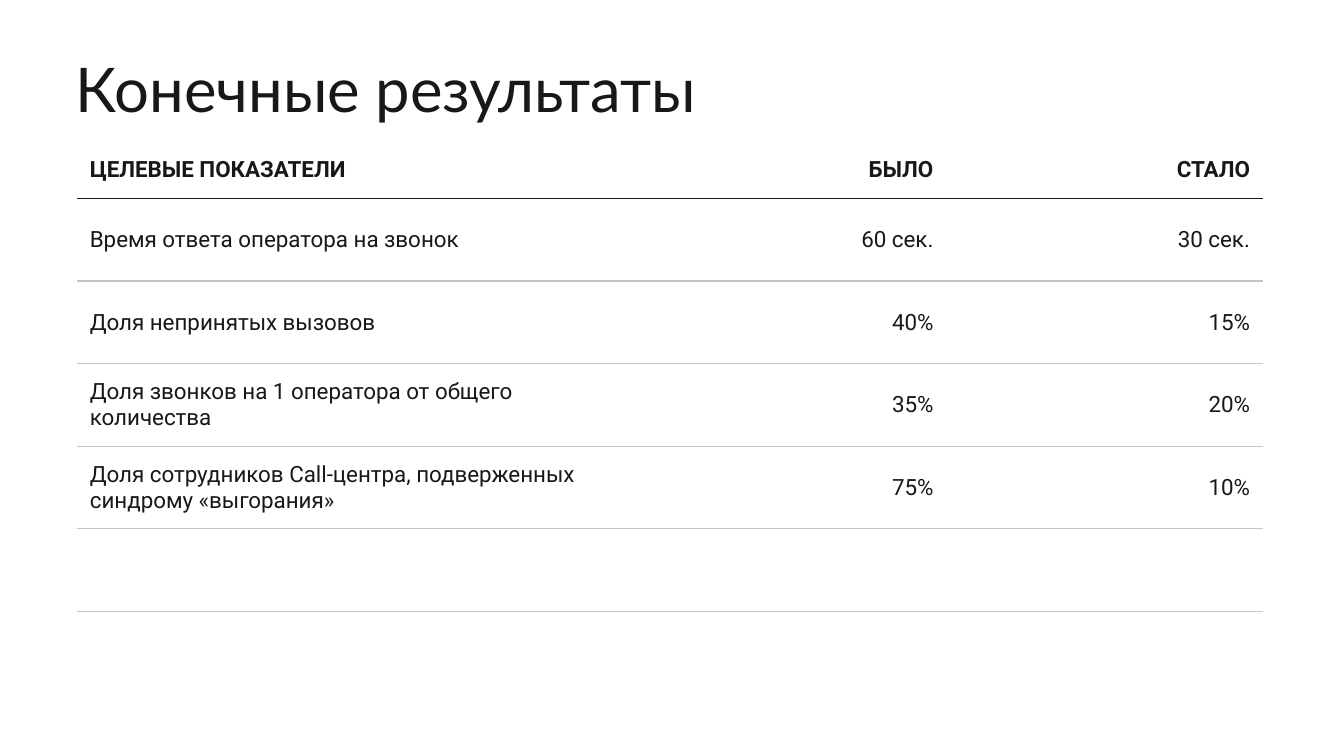
from lxml.etree import SubElement
from pptx import Presentation
from pptx.dml.color import RGBColor
from pptx.enum.text import MSO_ANCHOR, PP_ALIGN
from pptx.oxml.ns import qn
from pptx.util import Pt

TITLE = "Конечные результаты"
ROWS = [
    ("ЦЕЛЕВЫЕ ПОКАЗАТЕЛИ", "БЫЛО", "СТАЛО"),
    ("Время ответа оператора на звонок", "60 сек.", "30 сек."),
    ("Доля непринятых вызовов", "40%", "15%"),
    ("Доля звонков на 1 оператора от общего количества", "35%", "20%"),
    ("Доля сотрудников Call-центра, подверженных синдрому «выгорания»", "75%", "10%"),
    ("", "", ""),
    ("", "", ""),
]
WIDTHS = (396.7, 223.9, 226.1)
HEAD, BODY = 41.5, 59
INK, RULE = "181818", "C5C5C5"


def write(para, text, font, size, bold=False):
    run = para.add_run()
    run.text = text
    run.font.name = font
    run.font.size = Pt(size)
    run.font.bold = bold
    run.font.color.rgb = RGBColor.from_string(INK)


def border(cell, rules):
    """Draw the sides named in rules as (colour, width); clear the others."""
    props = cell._tc.get_or_add_tcPr()
    for spot, side in enumerate("LRTB"):
        line = SubElement(props, qn(f"a:ln{side}"))
        props.insert(spot, line)
        if side in rules:
            color, width = rules[side]
            line.set("w", str(Pt(width)))
            fill = SubElement(line, qn("a:solidFill"))
            SubElement(fill, qn("a:srgbClr"), val=color)
        else:
            SubElement(line, qn("a:noFill"))


def under(row):
    """Give the rule below a row, or None outside the ruled rows."""
    if row == 0:
        return INK, 1.5
    return (RULE, 1) if 0 < row < len(ROWS) - 1 else None


def main():
    deck = Presentation()
    deck.slide_width, deck.slide_height = Pt(960), Pt(540)
    slide = deck.slides.add_slide(deck.slide_layouts[5])

    title = slide.shapes.title
    title.left, title.top = Pt(46.8), Pt(37.4)
    title.width, title.height = Pt(912), Pt(57)
    frame = title.text_frame
    frame.word_wrap = True
    frame.vertical_anchor = MSO_ANCHOR.MIDDLE
    para = frame.paragraphs[0]
    para.alignment = PP_ALIGN.LEFT
    para.line_spacing = 0.9
    write(para, TITLE, "Lato", 44)

    high = HEAD + BODY * (len(ROWS) - 1)
    table = slide.shapes.add_table(
        len(ROWS), len(WIDTHS), Pt(55.2), Pt(100.3), Pt(sum(WIDTHS)), Pt(high)
    ).table
    table.first_row = table.horz_banding = False
    for col, width in zip(table.columns, WIDTHS):
        col.width = Pt(width)
    for r, texts in enumerate(ROWS):
        table.rows[r].height = Pt(BODY if r else HEAD)
        sides = {"T": under(r - 1), "B": under(r)}
        rules = {side: rule for side, rule in sides.items() if rule}
        for c, text in enumerate(texts):
            cell = table.cell(r, c)
            cell.fill.background()
            border(cell, rules)
            cell.vertical_anchor = MSO_ANCHOR.MIDDLE
            cell.margin_left = cell.margin_right = Pt(9)
            cell.margin_top = cell.margin_bottom = Pt(4.5)
            para = cell.text_frame.paragraphs[0]
            para.alignment = PP_ALIGN.RIGHT if c else PP_ALIGN.LEFT
            if text:
                write(para, text, "Roboto", 16, r == 0)

    deck.save("out.pptx")


if __name__ == "__main__":
    main()
